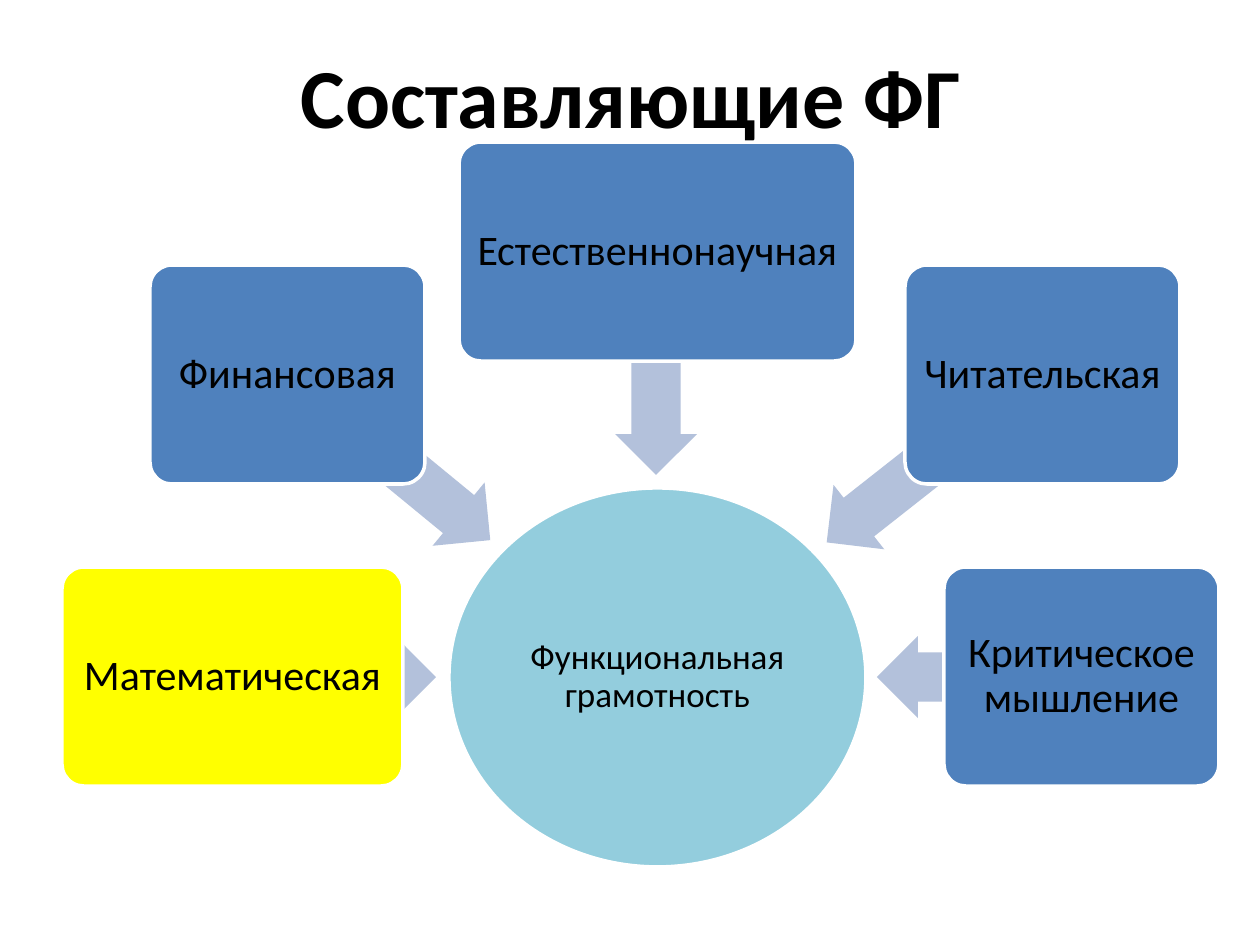
from dataclasses import dataclass

from pptx import Presentation
from pptx.dml.color import RGBColor
from pptx.enum.shapes import MSO_SHAPE
from pptx.enum.text import MSO_ANCHOR, PP_ALIGN
from pptx.util import Emu, Pt

PX_PER_INCH = 126


def px(n):
    return Emu(round(n * 914400 / PX_PER_INCH))


@dataclass(frozen=True)
class Theme:
    font: str = "Calibri"
    text: str = "000000"
    outline: str = "FFFFFF"
    box: str = "4F81BD"
    accent: str = "FFFF00"
    hub: str = "93CDDD"
    arrow: str = "B3C1DB"
    title_size: int = 48
    box_size: int = 24
    hub_size: int = 20


class SlideBuilder:
    def __init__(self, slide, theme):
        self.s = slide
        self.theme = theme

    def label(self, sp, text, size, bold=False):
        tf = sp.text_frame
        tf.text = text
        tf.word_wrap = True
        tf.vertical_anchor = MSO_ANCHOR.MIDDLE
        p = tf.paragraphs[0]
        p.alignment = PP_ALIGN.CENTER
        font = p.runs[0].font
        font.name, font.size, font.bold = self.theme.font, Pt(size), bold
        font.color.rgb = RGBColor.from_string(self.theme.text)
        return p

    def title(self, text, x, y, w, h):
        sp = self.s.shapes.title
        sp.left, sp.top, sp.width, sp.height = map(px, (x, y, w, h))
        self.label(sp, text, self.theme.title_size, bold=True)

    def shape(self, kind, x, y, w, h, fill):
        sp = self.s.shapes.add_shape(kind, *map(px, (x, y, w, h)))
        sp.shadow.inherit = False
        sp.fill.solid()
        sp.fill.fore_color.rgb = RGBColor.from_string(fill)
        return sp

    def node(self, kind, text, x, y, w, h, fill, size, inset):
        sp = self.shape(kind, x, y, w, h, fill)
        sp.line.color.rgb = RGBColor.from_string(self.theme.outline)
        sp.line.width = Pt(2)
        tf = sp.text_frame
        tf.margin_left = tf.margin_right = px(inset)
        tf.margin_top = tf.margin_bottom = px(inset)
        self.label(sp, text, size).line_spacing = 0.9
        return sp

    def hub(self, text, x, y, w, h):
        self.node(MSO_SHAPE.OVAL, text, x, y, w, h,
                  self.theme.hub, self.theme.hub_size, inset=1)

    def box(self, text, x, y, w, h, fill):
        sp = self.node(MSO_SHAPE.ROUNDED_RECTANGLE, text, x, y, w, h,
                       fill, self.theme.box_size, inset=6)
        sp.adjustments[0] = 0.1

    def arrow(self, cx, cy, length, thickness, angle):
        sp = self.shape(MSO_SHAPE.LEFT_ARROW, cx - length / 2,
                        cy - thickness / 2, length, thickness,
                        self.theme.arrow)
        sp.line.fill.background()
        sp.adjustments[0], sp.adjustments[1] = 0.6, 0.5
        sp.rotation = angle


def main():
    theme = Theme()
    prs = Presentation()
    prs.slide_width, prs.slide_height = px(1260), px(945)
    slide = SlideBuilder(prs.slides.add_slide(prs.slide_layouts[5]), theme)

    # Title and central concept
    slide.title("Составляющие ФГ", 64, 16, 1134, 158)
    slide.hub("Функциональная грамотность", 449, 488, 417, 379)

    # Components: text, box (x, y, width), fill, arrow (cx, cy, length, angle)
    box_h, arrow_h = 219, 82
    low, middle, high = 567, 265, 142
    components = [
        ("Математическая", (62, low, 341), theme.accent, (334, 677, 204, 180)),
        ("Финансовая", (150, middle, 275), theme.box, (389, 457, 262, 219.4)),
        ("Естественнонаучная", (459, high, 397), theme.box, (656, 364, 222, 270)),
        ("Читательская", (905, middle, 275), theme.box, (934, 458, 273, 321.8)),
        ("Критическое мышление", (944, low, 275), theme.box, (979, 677, 204, 0)),
    ]
    for text, (x, y, w), fill, (cx, cy, length, angle) in components:
        slide.arrow(cx, cy, length, arrow_h, angle)
        slide.box(text, x, y, w, box_h, fill)

    prs.save("out.pptx")


if __name__ == "__main__":
    main()
